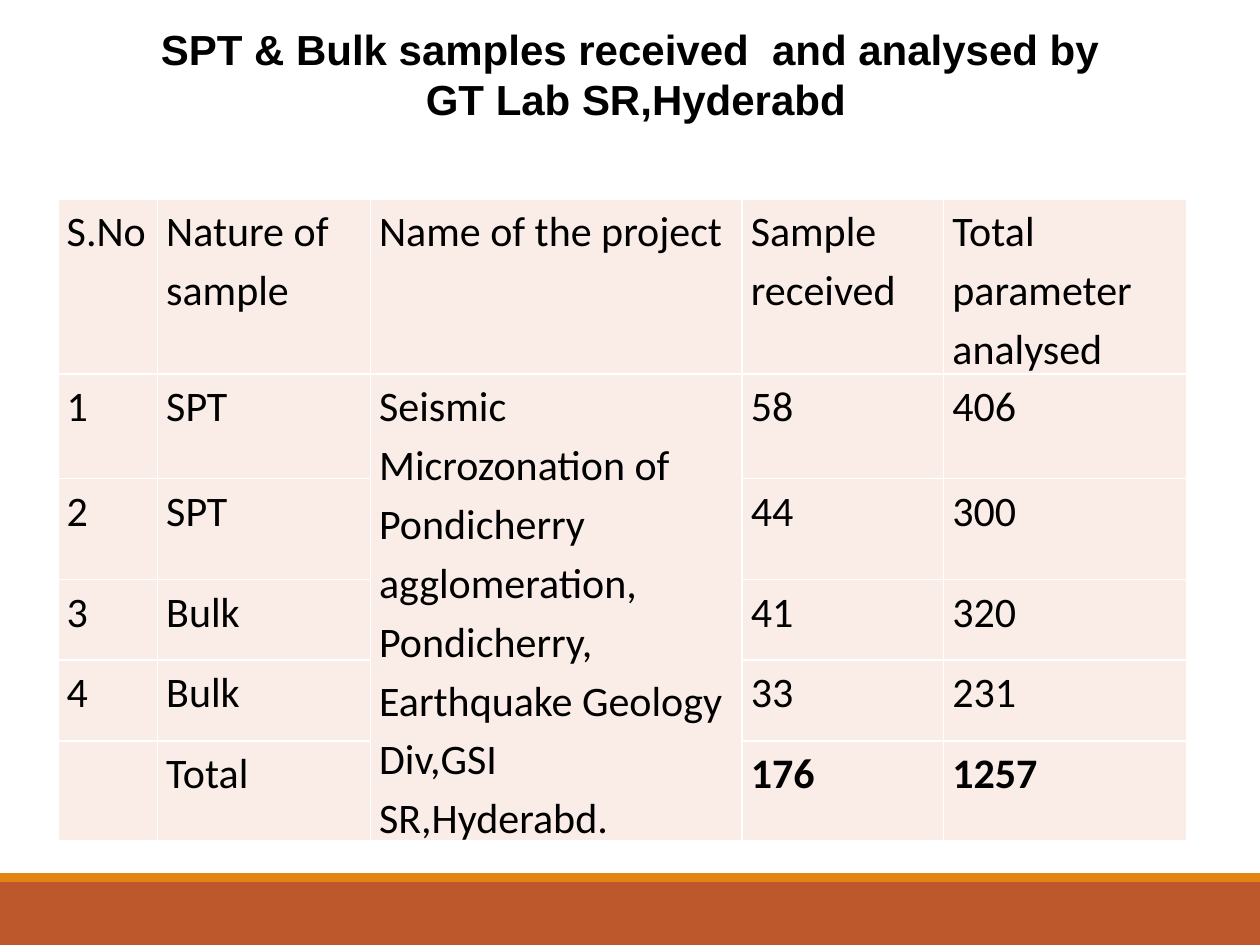
from dataclasses import dataclass

from lxml import etree
from pptx import Presentation
from pptx.dml.color import RGBColor
from pptx.enum.shapes import MSO_SHAPE
from pptx.enum.text import MSO_ANCHOR, PP_ALIGN
from pptx.oxml.ns import qn
from pptx.util import Inches, Pt

RECT = MSO_SHAPE.RECTANGLE
MIDDLE = MSO_ANCHOR.MIDDLE
CENTER = PP_ALIGN.CENTER

BLACK, WHITE, CELL_FILL = "000000", "FFFFFF", "FAEDE7"
TITLE_FONT = {"name": "Arial", "size": Pt(24), "bold": True}
CELL_FONT = {"name": "Calibri", "size": Pt(24), "bold": False}
TOTAL_FONT = {**CELL_FONT, "bold": True}
CELL_PARAGRAPH = {"line_spacing": 1.15, "space_after": Pt(10)}
CELL_MARGINS = {
    "margin_left": Inches(0.07), "margin_right": Inches(0.07),
    "margin_top": 0, "margin_bottom": 0,
}

TITLE = ["SPT & Bulk samples received  and analysed by", " GT Lab SR,Hyderabd"]
PROJECT = ("Seismic Microzonation of Pondicherry agglomeration, Pondicherry, "
           "Earthquake Geology Div,GSI SR,Hyderabd.")
PROJECT_COL = 2
COL_WIDTHS = [0.79, 1.69, 2.95, 1.6, 1.93]
ROW_HEIGHTS = [1.39, 0.83, 0.8, 0.64, 0.64, 0.79]
ROWS = [
    ["S.No", "Nature of sample", "Name of the project", "Sample received",
     "Total parameter analysed"],
    ["1", "SPT", PROJECT, "58", "406"],
    ["2", "SPT", "", "44", "300"],
    ["3", "Bulk", "", "41", "320"],
    ["4", "Bulk", "", "33", "231"],
    ["", "Total", "", "176", "1257"],
]


@dataclass
class Band:
    top: float
    height: float
    color: str


BANDS = [Band(7, 0.5, "BD582C"), Band(6.93, 0.07, "E48312")]


def rgb(color: str) -> RGBColor:
    return RGBColor.from_string(color)


def set_attrs(target, values: dict) -> None:
    for name, value in values.items():
        setattr(target, name, value)


def add_run(p, text: str, font: dict) -> None:
    r = p.add_run()
    r.text = text
    set_attrs(r.font, font)
    r.font.color.rgb = rgb(BLACK)


def add_band(slide, band: Band) -> None:
    sp = slide.shapes.add_shape(RECT, 0, Inches(band.top), Inches(10), Inches(band.height))
    sp.shadow.inherit = False
    sp.fill.solid()
    sp.fill.fore_color.rgb = rgb(band.color)
    sp.line.fill.background()


def add_title(slide, lines: list[str]) -> None:
    sp = slide.shapes.add_textbox(Inches(1.14), Inches(0.13), Inches(7.72), Inches(0.91))
    tf = sp.text_frame
    set_attrs(tf, {"word_wrap": False, "vertical_anchor": MIDDLE})
    for i, line in enumerate(lines):
        p = tf.add_paragraph() if i else tf.paragraphs[0]
        p.alignment = CENTER
        add_run(p, line, TITLE_FONT)


def set_borders(cell, color: str, width: Pt) -> None:
    tcPr = cell._tc.get_or_add_tcPr()
    for i, side in enumerate(("lnL", "lnR", "lnT", "lnB")):
        ln = etree.Element(qn(f"a:{side}"), w=str(int(width)))
        fill = etree.SubElement(ln, qn("a:solidFill"))
        etree.SubElement(fill, qn("a:srgbClr"), val=color)
        tcPr.insert(i, ln)


def fill_cell(cell, text: str, font: dict) -> None:
    set_attrs(cell, CELL_MARGINS)
    cell.fill.solid()
    cell.fill.fore_color.rgb = rgb(CELL_FILL)
    set_borders(cell, WHITE, Pt(1))
    p = cell.text_frame.paragraphs[0]
    set_attrs(p, CELL_PARAGRAPH)
    if text:
        add_run(p, text, font)
    else:
        set_attrs(p.font, font)


def add_sample_table(slide) -> None:
    frame = slide.shapes.add_table(
        len(ROWS), len(COL_WIDTHS), Inches(0.46), Inches(1.58),
        Inches(sum(COL_WIDTHS)), Inches(sum(ROW_HEIGHTS)))
    table = frame.table
    for col, width in zip(table.columns, COL_WIDTHS):
        col.width = Inches(width)
    for row, height in zip(table.rows, ROW_HEIGHTS):
        row.height = Inches(height)

    last = len(ROWS) - 1
    for i, row in enumerate(ROWS):
        for j, text in enumerate(row):
            is_sum = i == last and j > PROJECT_COL
            fill_cell(table.cell(i, j), text, TOTAL_FONT if is_sum else CELL_FONT)
    # One project covers every sample row
    table.cell(1, PROJECT_COL).merge(table.cell(last, PROJECT_COL))


def main() -> None:
    prs = Presentation()
    prs.slide_width, prs.slide_height = Inches(10), Inches(7.5)
    slide = prs.slides.add_slide(prs.slide_layouts[6])

    # Footer bands
    for band in BANDS:
        add_band(slide, band)

    # Heading and sample counts
    add_title(slide, TITLE)
    add_sample_table(slide)

    prs.save("out.pptx")


if __name__ == "__main__":
    main()
